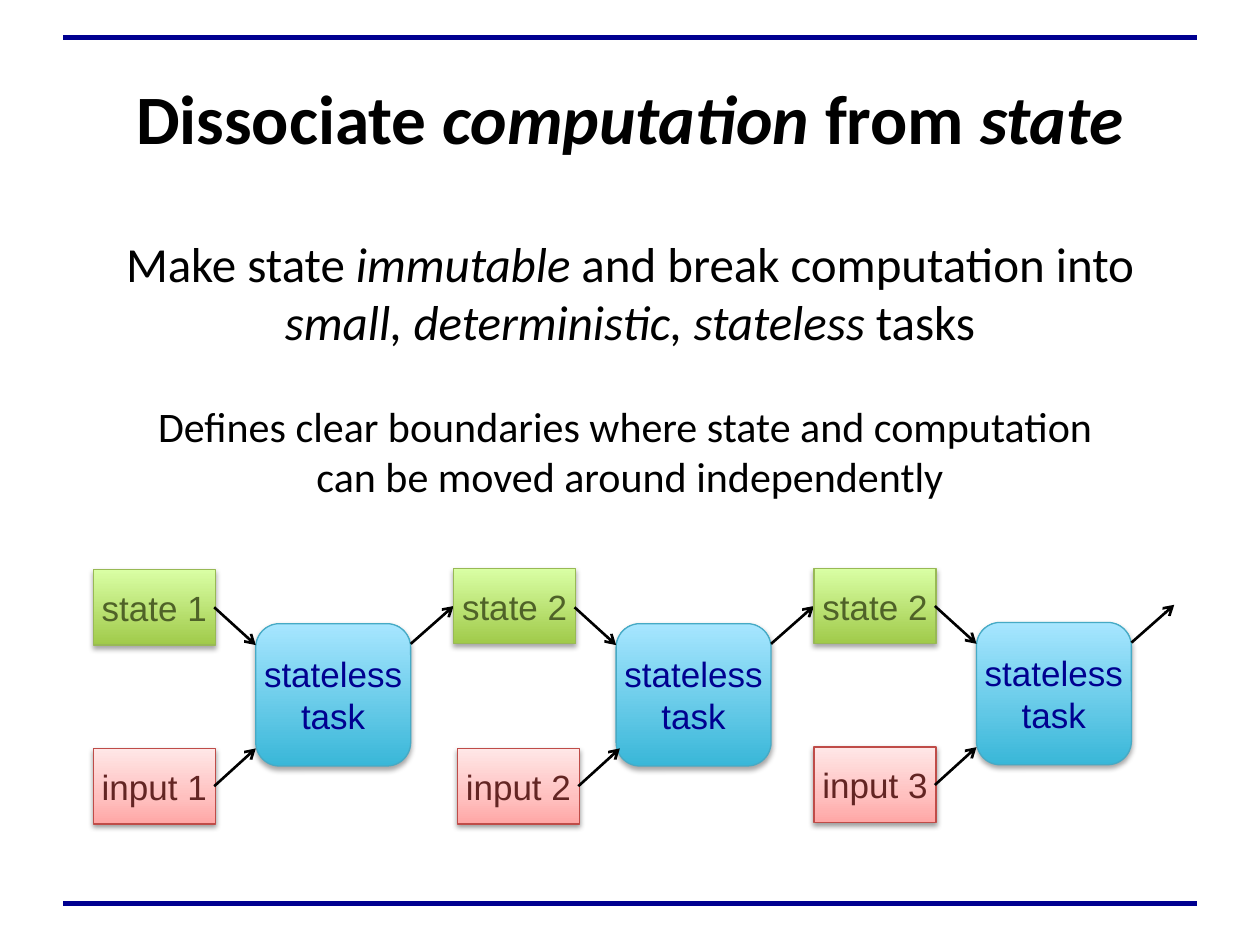
from lxml import etree
from copy import deepcopy
from pptx import Presentation
from pptx.dml.color import RGBColor
from pptx.enum.shapes import MSO_CONNECTOR, MSO_SHAPE
from pptx.enum.text import MSO_ANCHOR, MSO_AUTO_SIZE, PP_ALIGN
from pptx.oxml import parse_xml
from pptx.oxml.ns import nsdecls, qn
from pptx.util import Inches, Pt

RECT, ROUNDED = MSO_SHAPE.RECTANGLE, MSO_SHAPE.ROUNDED_RECTANGLE
STRAIGHT = MSO_CONNECTOR.STRAIGHT
CENTER, MIDDLE, TOP = PP_ALIGN.CENTER, MSO_ANCHOR.MIDDLE, MSO_ANCHOR.TOP

COLORS = {"rule": "000090", "text": "000000"}
# Gradient stops run from the bottom of the box to its top.
STYLES = {
    "task": {"stops": [(0, "39B7D8"), (1, "A7E6FF")], "line": "46AAC5",
             "text": "000090", "alpha": 35, "dist": 1.8},
    "state": {"stops": [(0, "A0CA4A"), (1, "DAFFA5")], "line": "98B955",
              "text": "4F6228", "alpha": 35, "dist": 1.8},
    "input": {"stops": [(0, "FFA6A5"), (0.35, "FFC0BF"), (1, "FFE7E7")], "line": "BF4C48",
              "text": "632523", "alpha": 38, "dist": 1.6},
}


def add_line(x1, y1, x2, y2, color, width, arrow=False):
    line = slide.shapes.add_connector(STRAIGHT, Inches(x1), Inches(y1), Inches(x2), Inches(y2))
    line.line.color.rgb = RGBColor.from_string(color)
    line.line.width = Pt(width)
    if arrow:
        etree.SubElement(line.line._get_or_add_ln(), qn("a:tailEnd"), type="arrow")
    etree.SubElement(line._element.spPr, qn("a:effectLst"))


def add_box(kind, text, x, y, w, h):
    """Add a labelled box with the gradient, outline and shadow of its kind."""
    style = STYLES[kind]
    sp = slide.shapes.add_shape(ROUNDED if kind == "task" else RECT,
                                Inches(x), Inches(y), Inches(w), Inches(h))
    sp.fill.gradient()
    sp.fill.gradient_angle = 90
    stop_list = sp._element.spPr.find(".//" + qn("a:gsLst"))
    while len(stop_list) < len(style["stops"]):
        stop_list.append(deepcopy(stop_list[0]))
    for stop, (position, color) in zip(sp.fill.gradient_stops, style["stops"]):
        stop.position = position
        stop.color.rgb = RGBColor.from_string(color)
    sp.line.color.rgb = RGBColor.from_string(style["line"])
    sp.line.width = Pt(0.75)

    sp.shadow.inherit = False
    sp._element.spPr.find(qn("a:effectLst")).append(parse_xml(
        f'<a:outerShdw {nsdecls("a")} blurRad="{Pt(3.1)}" dist="{Pt(style["dist"])}" '
        f'dir="5400000" rotWithShape="0"><a:srgbClr val="000000">'
        f'<a:alpha val="{style["alpha"] * 1000}"/></a:srgbClr></a:outerShdw>'))

    tf = sp.text_frame
    tf.word_wrap = True
    tf.vertical_anchor = MIDDLE
    tf.margin_left = tf.margin_right = 0
    p = tf.paragraphs[0]
    p.text = text
    p.alignment = CENTER
    p.font.name, p.font.size = "Arial", Pt(20)
    p.font.color.rgb = RGBColor.from_string(style["text"])


prs = Presentation()
prs.slide_width, prs.slide_height = Inches(10), Inches(7.5)
slide = prs.slides.add_slide(prs.slide_layouts[1])

for y in (0.3, 7.17):
    add_line(0.5, y, 9.5, y, COLORS["rule"], 3)

# Each paragraph: size, space before, then (text, italic) runs
title_text = [(39.6, 0, [("Dissociate ", False), ("computation", True),
                         (" from ", False), ("state", True)])]
body_text = [
    (28, 0, [("Make state ", False), ("immutable ", True),
             ("and break computation into ", False),
             ("small, deterministic, stateless ", True), ("tasks", False)]),
    (24, 28.3, [("Defines clear boundaries where state and computation ", False)]),
    (24, 0, [("can be moved around independently", False)]),
]
for holder, top, height, anchor, bold, paragraphs in (
    (slide.shapes.title, 0.3, 1.25, MIDDLE, True, title_text),
    (slide.placeholders[1], 1.75, 4.95, TOP, False, body_text),
):
    holder.left, holder.top = Inches(0.5), Inches(top)
    holder.width, holder.height = Inches(9), Inches(height)
    tf = holder.text_frame
    tf.auto_size = MSO_AUTO_SIZE.NONE
    tf.word_wrap = True
    tf.vertical_anchor = anchor
    tf.margin_left = tf.margin_right = tf.margin_top = tf.margin_bottom = Inches(0.1)
    for i, (size, before, runs) in enumerate(paragraphs):
        p = tf.paragraphs[0] if i == 0 else tf.add_paragraph()
        p.alignment = CENTER
        p.space_before = Pt(before)
        p.font.name, p.font.size, p.font.bold = "Calibri", Pt(size), bold
        p.font.color.rgb = RGBColor.from_string(COLORS["text"])
        pPr = p._p.get_or_add_pPr()
        pPr.set("marL", "0")
        pPr.set("indent", "0")
        pPr.insert_element_before(parse_xml(f'<a:buNone {nsdecls("a")}/>'),
                                  "a:tabLst", "a:defRPr", "a:extLst")
        for text, italic in runs:
            r = p.add_run()
            r.text = text
            r.font.italic = italic

# Each stage: state and input feed a task, whose result leads to the next state
stages = [
    ("state 1", "input 1", 4.52, 4.95, 0),
    ("state 2", "input 2", 4.51, 4.95, 0.03),
    ("state 2", "input 3", 4.51, 4.94, 0),
]
for i, (state, input_label, state_y, task_y, input_dx) in enumerate(stages):
    x = 0.74 + 2.86 * i
    input_x = x + input_dx
    task_x = x + 1.29
    task_right = task_x + 1.23
    add_box("task", "stateless task", task_x, task_y, 1.23, 1.13)
    add_box("state", state, x, state_y, 0.97, 0.6)
    add_box("input", input_label, input_x, task_y + 0.99, 0.97, 0.6)
    for x1, dy1, x2, dy2 in (
        (input_x + 0.96, 1.29, input_x + 1.29, 0.99),
        (x + 0.96, -0.13, task_x, 0.17),
        (task_right, 0.16, task_right + 0.34, -0.14),
    ):
        add_line(x1, task_y + dy1, x2, task_y + dy2, COLORS["text"], 1.5, arrow=True)

prs.save("out.pptx")
